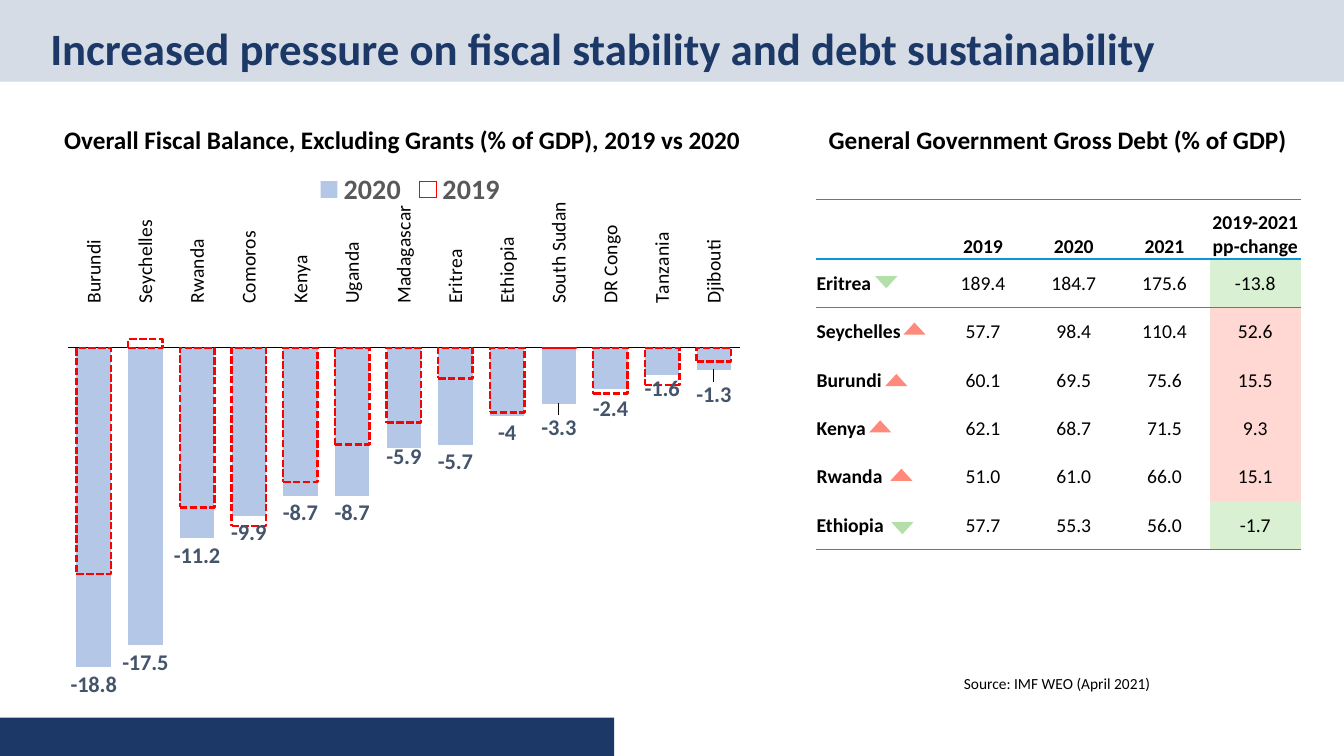
import pptx
import pptx.util
import pptx.chart.data
import pptx.dml.color
import pptx.enum.chart
import pptx.enum.dml
import pptx.enum.shapes
import pptx.enum.text
import pptx.oxml
import pptx.oxml.ns

Inches, Pt = pptx.util.Inches, pptx.util.Pt
ALIGN, ANCHOR = pptx.enum.text.PP_ALIGN, pptx.enum.text.MSO_ANCHOR
SHAPE = pptx.enum.shapes.MSO_SHAPE
ENUM = pptx.enum.chart
NAVY, UP, DOWN = "1C3867", "FF897A", "B3E0A8"


def color(code):
    return pptx.dml.color.RGBColor.from_string(code)


def style(item, text=None, size=14, tint="000000", bold=False, align=ALIGN.CENTER):
    """Format a chart font, or write formatted text into a text frame."""
    font = item
    if text is not None:
        para = item.paragraphs[0]
        para.alignment = align
        run = para.add_run()
        run.text = text
        font = run.font
    font.name, font.size, font.bold = "Calibri", Pt(size), bold
    font.color.rgb = color(tint)


prs = pptx.Presentation()
prs.slide_width, prs.slide_height = Inches(13.33), Inches(7.5)
slide = prs.slides.add_slide(prs.slide_layouts[6])

# Bands and table trend marks
UP_Y = {"Seychelles": (8.96, 3.2), "Burundi": (8.78, 3.71),
        "Kenya": (8.62, 4.17), "Rwanda": (8.83, 4.65)}
DOWN_Y = {"Eritrea": (8.68, 2.74), "Ethiopia": (8.84, 5.18)}
marks = [(SHAPE.RECTANGLE, 0, 0, 13.33, 0.81, "D6DCE5", 0),
         (SHAPE.RECTANGLE, 0, 7.12, 6.09, 0.38, NAVY, 0)]
for spots, tint, turn in ((UP_Y, UP, 0), (DOWN_Y, DOWN, 180)):
    for left, top in spots.values():
        marks.append((SHAPE.ISOSCELES_TRIANGLE, left, top, 0.22, 0.12, tint, turn))

# Table
rows = [
    ["", "2019", "2020", "2021", "2019-2021 pp-change"],
    ["Eritrea", "189.4", "184.7", "175.6", "-13.8"],
    ["Seychelles", "57.7", "98.4", "110.4", "52.6"],
    ["Burundi", "60.1", "69.5", "75.6", "15.5"],
    ["Kenya", "62.1", "68.7", "71.5", "9.3"],
    ["Rwanda", "51.0", "61.0", "66.0", "15.1"],
    ["Ethiopia", "57.7", "55.3", "56.0", "-1.7"],
]
last = len(rows) - 1
frame = slide.shapes.add_table(len(rows), 5, Inches(8.09), Inches(1.98),
                               Inches(4.81), Inches(3.47))
table = frame.table
table.first_row = table.horz_banding = False
plain = table._tbl.tblPr.find(pptx.oxml.ns.qn("a:tableStyleId"))
plain.text = "{2D5ABB26-0587-4C30-8999-92F81FD0307C}"
for c, col in enumerate(table.columns):
    col.width = Inches(0.9 if c else 1.21)
for r, row in enumerate(rows):
    table.rows[r].height = Inches(0.48 if r else 0.59)
    sides = {0: ("T", "B"), 1: ("T",), last: ("B",)}.get(r, ())
    for c, text in enumerate(row):
        cell = table.cell(r, c)
        cell.margin_left = cell.margin_right = cell.margin_top = Inches(0.01)
        cell.margin_bottom = 0
        cell.vertical_anchor = ANCHOR.MIDDLE if r else ANCHOR.BOTTOM
        style(cell.text_frame, text, bold=r == 0 or c == 0,
              align=ALIGN.CENTER if c else ALIGN.LEFT)
        for side in sides:
            cell._tc.get_or_add_tcPr().append(pptx.oxml.parse_xml(
                f'<a:ln{side} {pptx.oxml.ns.nsdecls("a")} w="12700"><a:solidFill>'
                f'<a:srgbClr val="0A97D9"/></a:solidFill></a:ln{side}>'))
        if r and c == 4:
            cell.fill.solid()
            cell.fill.fore_color.rgb = color("D9F0D3" if row[0] in DOWN_Y else "FFD8D3")
        else:
            cell.fill.background()

for kind, left, top, width, height, tint, turn in marks:
    mark = slide.shapes.add_shape(kind, Inches(left), Inches(top),
                                  Inches(width), Inches(height))
    mark.shadow.inherit = False
    mark.fill.solid()
    mark.fill.fore_color.rgb = color(tint)
    mark.line.fill.background()
    mark.rotation = turn

# Title, headings and source
bold = {"size": 18, "bold": True}
for left, top, width, height, text, form in (
    (0.4, 0.15, 12.52, 0.64,
     "Increased pressure on fiscal stability and debt sustainability",
     {"size": 32, "bold": True, "tint": NAVY, "align": ALIGN.LEFT}),
    (0.49, 1.18, 7, 0.4,
     "Overall Fiscal Balance, Excluding Grants (% of GDP), 2019 vs 2020", bold),
    (8.09, 1.18, 4.8, 0.4, "General Government Gross Debt (% of GDP)", bold),
    (9.36, 6.63, 2.25, 0.29, "Source: IMF WEO (April 2021)", {"size": 11}),
):
    box = slide.shapes.add_textbox(Inches(left), Inches(top), Inches(width), Inches(height))
    box.text_frame.word_wrap = True
    box.text_frame.vertical_anchor = ANCHOR.MIDDLE
    style(box.text_frame, text, **form)

# Chart
data = pptx.chart.data.CategoryChartData()
data.categories = ["Burundi", "Seychelles", "Rwanda", "Comoros", "Kenya", "Uganda",
                   "Madagascar", "Eritrea", "Ethiopia", "South Sudan", "DR Congo",
                   "Tanzania", "Djibouti"]
data.add_series("2020", [-18.8, -17.5, -11.2, -9.9, -8.7, -8.7, -5.9, -5.7, -4,
                         -3.3, -2.4, -1.6, -1.3])
data.add_series("2019", [-13.3, 0.5, -9.4, -10.5, -7.9, -5.7, -4.4, -1.8, -3.8,
                         0, -2.7, -2.2, -0.8])
chart = slide.shapes.add_chart(ENUM.XL_CHART_TYPE.COLUMN_CLUSTERED, Inches(0.66),
                               Inches(1.58), Inches(6.82), Inches(5.35), data).chart
style(chart.font, size=10)
chart.has_title = False
chart.has_legend = True
chart.legend.position = ENUM.XL_LEGEND_POSITION.TOP
chart.legend.include_in_layout = True
style(chart.legend.font, size=20, tint="595959", bold=True)

cats = chart.category_axis
cats.tick_label_position = ENUM.XL_TICK_LABEL_POSITION.HIGH
cats.major_tick_mark = ENUM.XL_TICK_MARK.NONE
cats.format.line.color.rgb = color("000000")
cats.format.line.width = Pt(0.75)
style(cats.tick_labels.font)
cats._element.txPr.bodyPr.set("rot", "-5400000")
vals = chart.value_axis
vals.minimum_scale, vals.maximum_scale = -20, 2
vals.has_major_gridlines = False
vals.visible = False

plot = chart.plots[0]
plot.gap_width, plot.overlap = 50, 100
plot.vary_by_categories = False
now, past = plot.series
for bars in plot.series:
    bars.invert_if_negative = False
now.format.fill.solid()
now.format.fill.fore_color.rgb = color("B4C7E7")
past.format.fill.background()
past.format.line.color.rgb = color("FF0000")
past.format.line.width = Pt(1.75)
past.format.line.dash_style = pptx.enum.dml.MSO_LINE.SQUARE_DOT

# Value labels, a few of them shifted up or down
tags = now.data_labels
tags.show_value = True
tags.position = ENUM.XL_LABEL_POSITION.OUTSIDE_END
label = {"size": 16, "tint": "44546A", "bold": True}
style(tags.font, **label)
C_NS = pptx.oxml.ns.nsdecls("c")
for spot, shift in {6: -0.015, 9: 0.013, 10: 0.006, 11: -0.006, 12: 0.015}.items():
    tag = now.points[spot].data_label
    style(tag.font, **label)
    tag.position = ENUM.XL_LABEL_POSITION.OUTSIDE_END
    node = now._element.xpath(f'c:dLbls/c:dLbl/c:idx[@val="{spot}"]')[0]
    node.addnext(pptx.oxml.parse_xml(
        f'<c:layout {C_NS}><c:manualLayout><c:x val="0"/><c:y val="{shift}"/>'
        '</c:manualLayout></c:layout>'))

# Plot area inside the chart
area = chart._chartSpace.chart.plotArea
for old in area.findall(pptx.oxml.ns.qn("c:layout")):
    area.remove(old)
area.insert(0, pptx.oxml.parse_xml(
    f'<c:layout {C_NS}><c:manualLayout><c:layoutTarget val="inner"/>'
    '<c:xMode val="edge"/><c:yMode val="edge"/><c:x val="0.002"/><c:y val="0.287"/>'
    '<c:w val="0.977"/><c:h val="0.694"/></c:manualLayout></c:layout>'))

prs.save("out.pptx")
